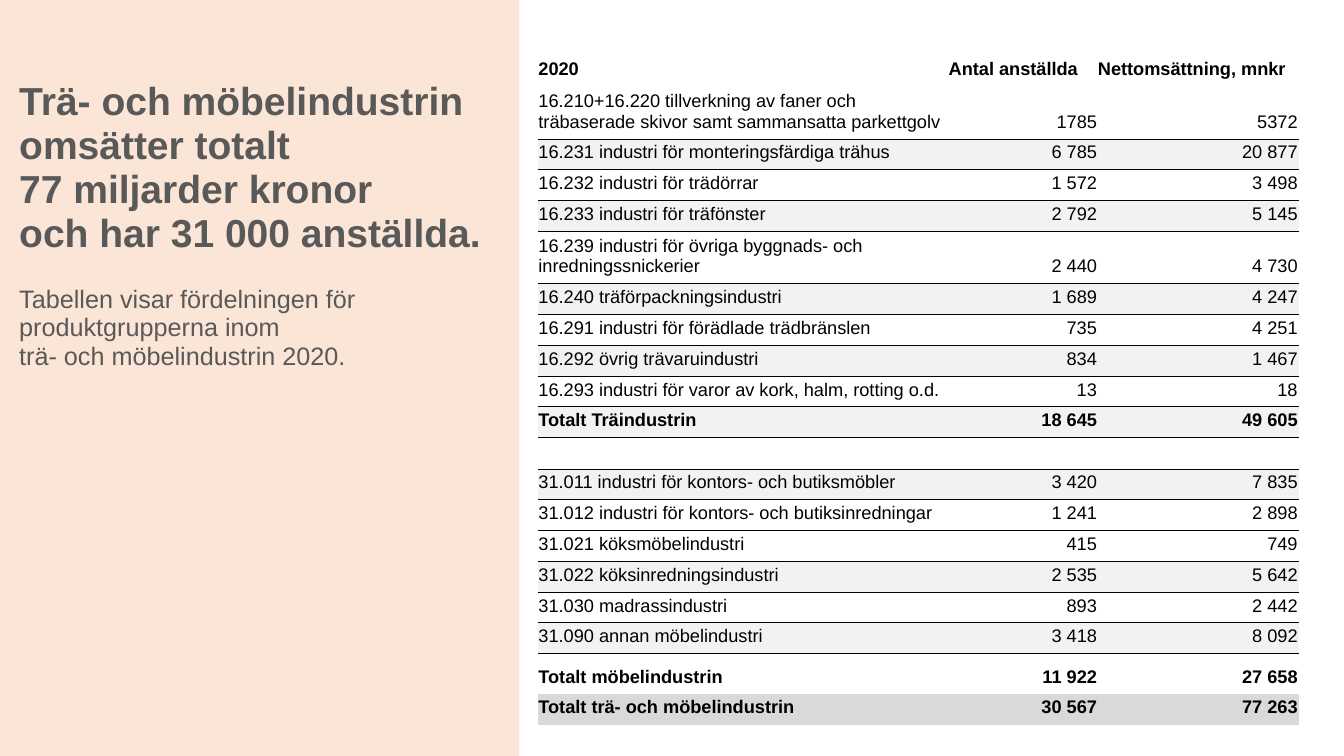
from copy import deepcopy
from dataclasses import dataclass

from lxml import etree
from pptx import Presentation
from pptx import util as u
from pptx.dml.color import RGBColor
from pptx.enum import shapes, text
from pptx.oxml import ns


@dataclass(frozen=True)
class Theme:
    font: str = "Arial"
    panel: str = "FBE5D6"
    heading: str = "595959"
    ink: str = "000000"
    band: str = "F2F2F2"
    sum_band: str = "D9D9D9"
    heading_size: float = 27.9
    intro_size: float = 18
    table_size: float = 13
    rule: float = 0.75


@dataclass(frozen=True)
class Area:
    """Position and size in percent of the slide."""
    left: float
    top: float
    width: float
    height: float


@dataclass(frozen=True)
class Style:
    """Look of a table row; edges lists its ruled sides, t and b."""
    fill: str | None = None
    edges: str = ""
    bold: bool = False
    height: float | None = None


@dataclass(frozen=True)
class Row:
    style: Style
    label: str = ""
    staff: str = ""
    sales: str = ""


THEME = Theme()
WIDTH, HEIGHT = u.Inches(13.33), u.Inches(7.5)
PANEL = Area(-0.15, 0, 38.78, 100)
TITLE = Area(0.68, 8, 36, 46.27)
TABLE = Area(40.06, 5.33, 56.56, 90.53)
COLUMNS = (30.53, 11.1, 14.93)
NO_STYLE = "{2D5ABB26-0587-4C30-8999-92F81FD0307C}"

# Row styles
HEADER = Style(bold=True, height=6.13)
PLAIN = Style(edges="b")
TALL = Style(edges="b", height=6.93)
BAND = Style(THEME.band, "t")
RULED = Style(edges="tb")
WOOD_SUM = Style(THEME.band, "t", True)
FURNITURE_SUM = Style(bold=True, height=5.33)
GRAND_SUM = Style(THEME.sum_band, bold=True)

ROWS = (
    Row(HEADER, "2020", "Antal anställda", "Nettomsättning, mnkr"),
    Row(TALL, "16.210+16.220 tillverkning av faner och träbaserade skivor samt "
        "sammansatta parkettgolv", "1785", "5372"),
    Row(BAND, "16.231 industri för monteringsfärdiga trähus", "6 785", "20 877"),
    Row(PLAIN, "16.232 industri för trädörrar", "1 572", "3 498"),
    Row(BAND, "16.233 industri för träfönster", "2 792", "5 145"),
    Row(TALL, "16.239 industri för övriga byggnads- och inredningssnickerier",
        "2 440", "4 730"),
    Row(BAND, "16.240 träförpackningsindustri", "1 689", "4 247"),
    Row(PLAIN, "16.291 industri för förädlade trädbränslen", "735", "4 251"),
    Row(BAND, "16.292 övrig trävaruindustri", "834", "1 467"),
    Row(PLAIN, "16.293 industri för varor av kork, halm, rotting o.d.", "13", "18"),
    Row(WOOD_SUM, "Totalt Träindustrin", "18 645", "49 605"),
    Row(PLAIN),
    Row(BAND, "31.011 industri för kontors- och butiksmöbler", "3 420", "7 835"),
    Row(PLAIN, "31.012 industri för kontors- och butiksinredningar", "1 241", "2 898"),
    Row(RULED, "31.021 köksmöbelindustri", "415", "749"),
    Row(BAND, "31.022 köksinredningsindustri", "2 535", "5 642"),
    Row(PLAIN, "31.030 madrassindustri", "893", "2 442"),
    Row(BAND, "31.090 annan möbelindustri", "3 418", "8 092"),
    Row(FURNITURE_SUM, "Totalt möbelindustrin", "11 922", "27 658"),
    Row(GRAND_SUM, "Totalt trä- och möbelindustrin", "30 567", "77 263"),
)


def across(share: float) -> int:
    return round(WIDTH * share / 100)


def down(share: float) -> int:
    return round(HEIGHT * share / 100)


def bounds(area: Area) -> tuple[int, int, int, int]:
    return across(area.left), down(area.top), across(area.width), down(area.height)


def write(para, wording: str, *, size: float, color: str, bold: bool = False,
          align=text.PP_ALIGN.LEFT) -> None:
    """Fill a paragraph; a vertical tab in the wording breaks the line."""
    para.text = wording
    para.alignment = align
    for span in para.runs:
        span.font.name = THEME.font
        span.font.size = u.Pt(size)
        span.font.bold = bold
        span.font.color.rgb = RGBColor.from_string(color)
    for line_break in para._p.findall(ns.qn("a:br")):
        line_break.append(deepcopy(para.runs[0]._r.rPr))
    if not wording:
        para._p.get_or_add_endParaRPr().set("sz", str(round(size * 100)))


def rule_cell(cell, edges: str) -> None:
    """Rule the named sides; border lines stand before the fill."""
    properties = cell._tc.get_or_add_tcPr()
    for edge in sorted(edges):
        line = etree.Element(ns.qn(f"a:ln{edge.upper()}"), w=str(u.Pt(THEME.rule)))
        fill = etree.SubElement(line, ns.qn("a:solidFill"))
        etree.SubElement(fill, ns.qn("a:srgbClr"), val=THEME.ink)
        properties.insert(0, line)


def draw_panel(page) -> None:
    panel = page.shapes.add_shape(shapes.MSO_SHAPE.RECTANGLE, *bounds(PANEL))
    panel.shadow.inherit = False
    panel.fill.solid()
    panel.fill.fore_color.rgb = RGBColor.from_string(THEME.panel)
    panel.line.fill.background()


def draw_title(page) -> None:
    title = page.shapes.title
    page.shapes._spTree.append(title._element)  # in front of the panel
    title.left, title.top, title.width, title.height = bounds(TITLE)
    frame = title.text_frame
    frame.word_wrap = True
    frame.auto_size = text.MSO_AUTO_SIZE.NONE
    frame.vertical_anchor = text.MSO_ANCHOR.BOTTOM
    frame.margin_left, frame.margin_right = u.Inches(0.1), u.Inches(0.05)
    frame.margin_bottom = u.Inches(0.39)
    heading, intro = frame.paragraphs[0], frame.add_paragraph()
    write(heading, "Trä- och möbelindustrin omsätter totalt\v77 miljarder kronor\v"
          "och har 31 000 anställda.", size=THEME.heading_size,
          color=THEME.heading, bold=True)
    write(intro, "Tabellen visar fördelningen för produktgrupperna inom\v"
          "trä- och möbelindustrin 2020.", size=THEME.intro_size, color=THEME.heading)
    for para in (heading, intro):
        para.line_spacing = 0.94
        para.space_before = u.Pt(0)
    intro.space_before = u.Pt(21)


def fill_cell(cell, wording: str, style: Style, numeric: bool) -> None:
    cell.margin_left, cell.margin_right = 0, u.Inches(0.01)
    cell.margin_top = u.Inches(0.01 if style is HEADER else 0.02)
    cell.margin_bottom = u.Inches(0.07)
    cell.vertical_anchor = text.MSO_ANCHOR.BOTTOM
    write(cell.text_frame.paragraphs[0], wording, size=THEME.table_size,
          color=THEME.ink, bold=style.bold,
          align=text.PP_ALIGN.RIGHT if numeric else text.PP_ALIGN.LEFT)
    if style.fill:
        cell.fill.solid()
        cell.fill.fore_color.rgb = RGBColor.from_string(style.fill)
    else:
        cell.fill.background()
    rule_cell(cell, style.edges)


def draw_table(page) -> None:
    table = page.shapes.add_table(len(ROWS), len(COLUMNS), *bounds(TABLE)).table
    table.first_row = table.horz_banding = False
    table._tbl.tblPr.find(ns.qn("a:tableStyleId")).text = NO_STYLE
    for column, share in zip(table.columns, COLUMNS):
        column.width = across(share)
    # Rows without a height of their own share what is left
    fixed = [row.style.height for row in ROWS if row.style.height]
    common = (TABLE.height - sum(fixed)) / (len(ROWS) - len(fixed))
    for line, row in zip(table.rows, ROWS):
        line.height = down(row.style.height or common)
        for index, wording in enumerate((row.label, row.staff, row.sales)):
            numeric = index > 0 and row.style is not HEADER
            fill_cell(line.cells[index], wording, row.style, numeric)


def main() -> None:
    deck = Presentation()
    deck.slide_width, deck.slide_height = WIDTH, HEIGHT
    page = deck.slides.add_slide(deck.slide_layouts[5])
    draw_panel(page)
    draw_title(page)
    draw_table(page)
    deck.save("out.pptx")


if __name__ == "__main__":
    main()
